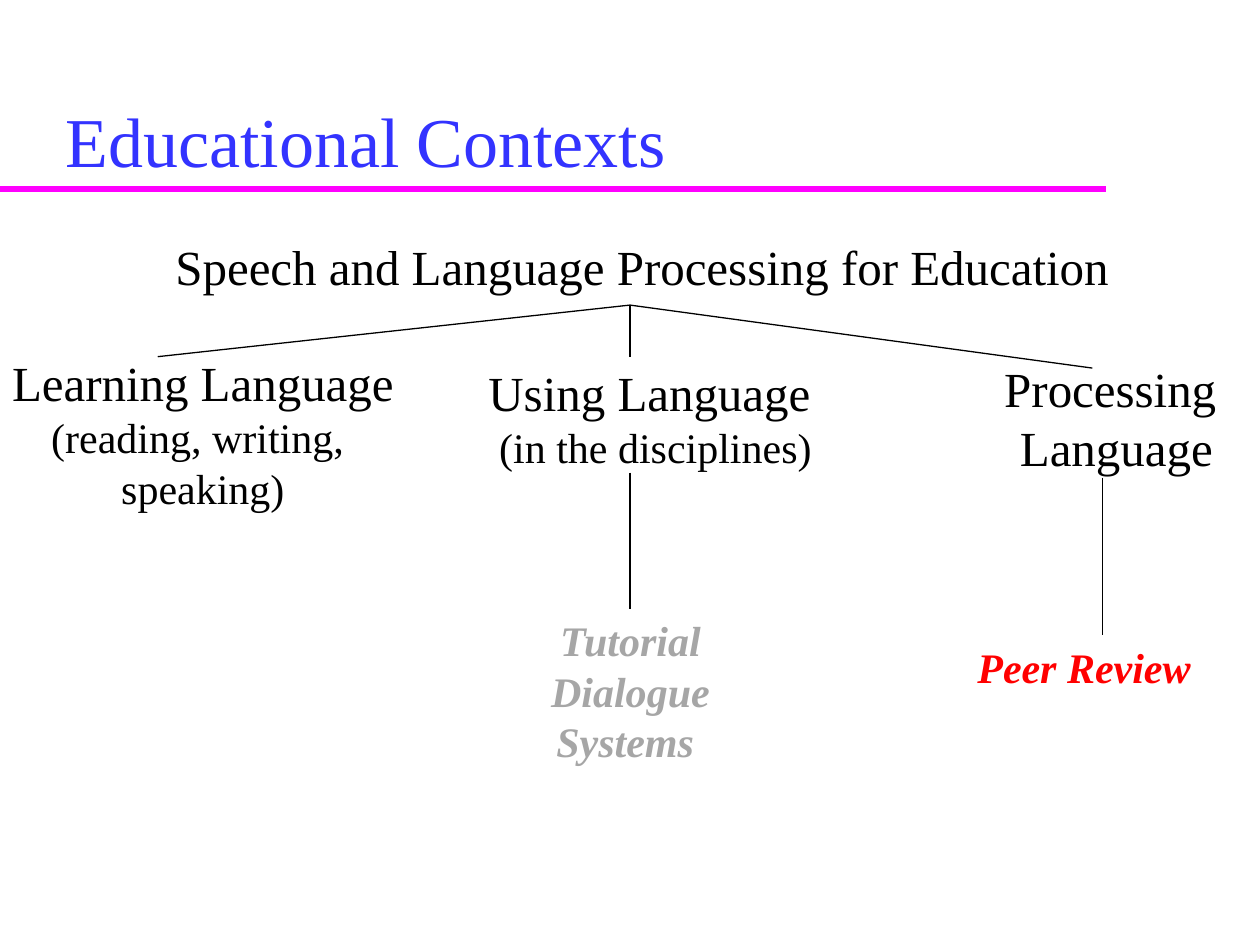
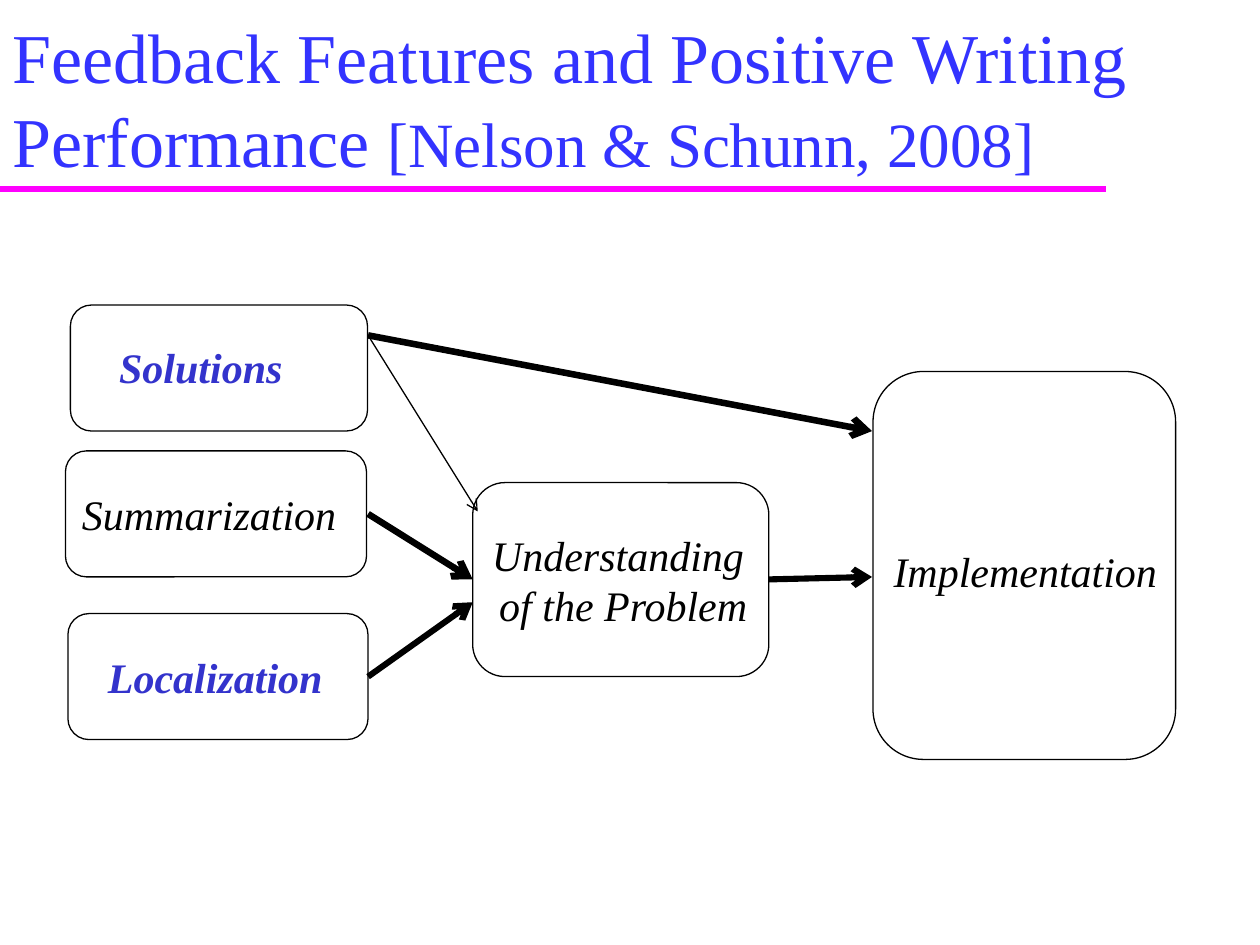
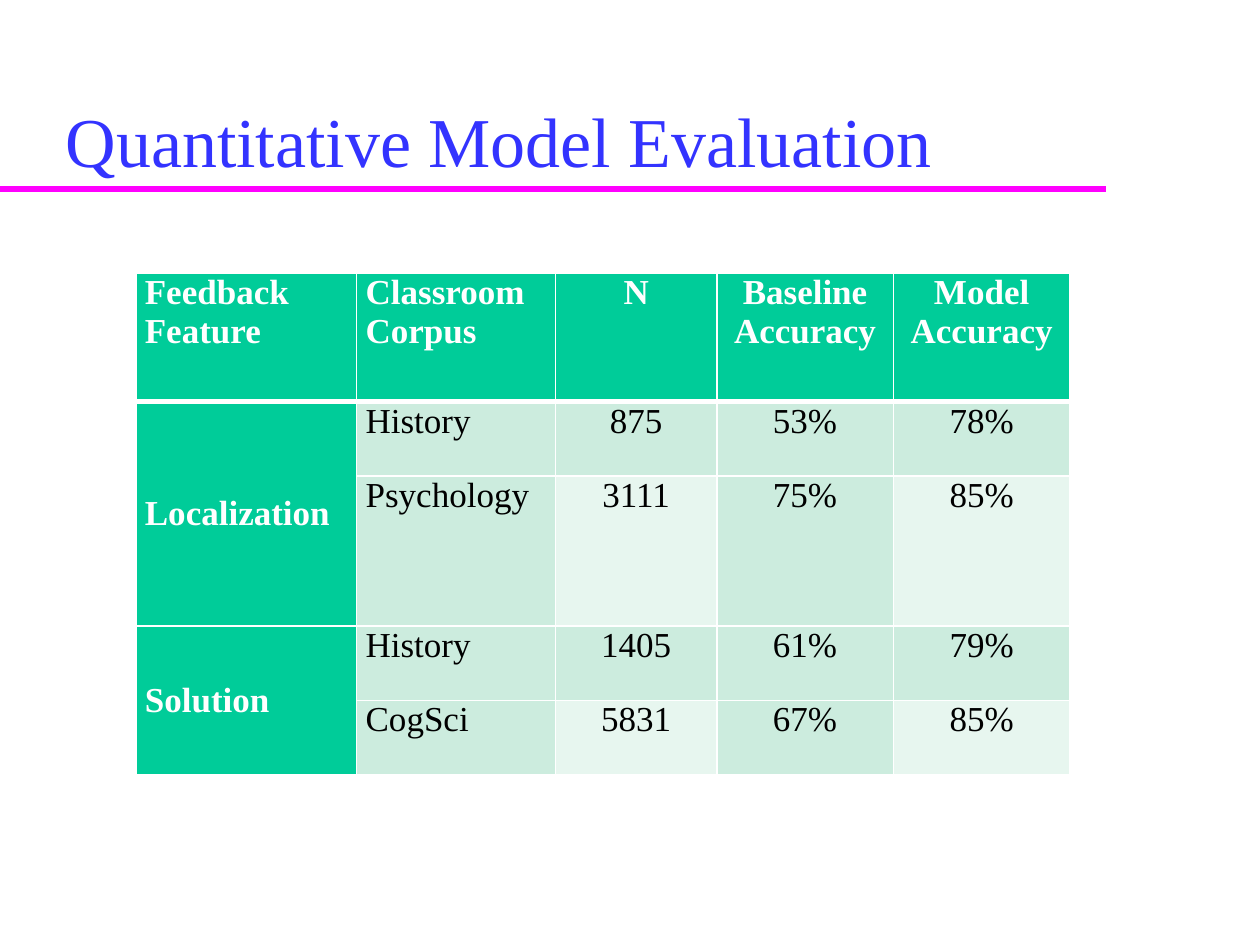
"""Build three slides on language processing in education and peer review."""
from dataclasses import dataclass

from lxml import etree
from pptx import Presentation
from pptx.dml.color import RGBColor
from pptx.enum.shapes import MSO_CONNECTOR, MSO_SHAPE
from pptx.enum.text import MSO_ANCHOR, MSO_AUTO_SIZE, PP_ALIGN
from pptx.oxml.ns import qn
from pptx.util import Cm, Pt

STRAIGHT = MSO_CONNECTOR.STRAIGHT
ROUNDED = MSO_SHAPE.ROUNDED_RECTANGLE
LEFT, CENTER = PP_ALIGN.LEFT, PP_ALIGN.CENTER
TOP, MIDDLE, BOTTOM = MSO_ANCHOR.TOP, MSO_ANCHOR.MIDDLE, MSO_ANCHOR.BOTTOM
NO_FIT = MSO_AUTO_SIZE.NONE


@dataclass(frozen=True)
class Theme:
    font: str = "Times New Roman"
    title: str = "3333FF"
    rule: str = "FF00FF"
    ink: str = "000000"
    muted: str = "A6A6A6"
    focus: str = "FF0000"
    key: str = "3333CC"
    white: str = "FFFFFF"
    header: str = "00CC99"
    band: str = "CCECDE"
    pale: str = "E7F6EF"
    title_size: int = 40
    citation_size: int = 36
    topic_size: int = 28
    label_size: int = 24
    table_size: int = 20
    hairline: float = 0.75


theme = Theme()


def write(frame, text, size=theme.label_size, color=theme.ink, bold=False,
          italic=False, align=CENTER, join=False):
    """Add each line of text as a paragraph, or join it to the last one."""
    for line in text.split("\n"):
        para = frame.paragraphs[-1]
        if para.runs and not join:
            para = frame.add_paragraph()
        para.alignment = align
        span = para.add_run()
        span.text = line
        span.font.name = theme.font
        span.font.size = Pt(size)
        span.font.bold = bold
        span.font.italic = italic
        span.font.color.rgb = RGBColor.from_string(color)


def draw_line(page, start, end, color=theme.ink, width=theme.hairline, arrow=False):
    """Draw a straight line between two points given in centimetres."""
    line = page.shapes.add_connector(STRAIGHT, *[Cm(value) for value in start + end])
    line.line.color.rgb = RGBColor.from_string(color)
    line.line.width = Pt(width)
    properties = line.element.spPr
    if arrow:
        etree.SubElement(properties.find(qn("a:ln")), qn("a:tailEnd"), type="arrow")
    etree.SubElement(properties, qn("a:effectLst"))
    return line


deck = Presentation()
deck.slide_width, deck.slide_height = Cm(25.4), Cm(19.05)
layout = deck.slide_layouts.get_by_name("Title Only")

titles = [
    ("Educational Contexts", 1.07, 21.56),
    ("Feedback Features and Positive Writing Performance ", 0, 25.4),
    ("Quantitative Model Evaluation", 1.07, 21.56),
]
pages = []
for text, left, width in titles:
    page = deck.slides.add_slide(layout)
    title = page.shapes.title
    title.left, title.top, title.width, title.height = Cm(left), Cm(0.74), Cm(width), Cm(3.05)
    title.text_frame.vertical_anchor = BOTTOM
    title.text_frame.auto_size = NO_FIT
    write(title.text_frame, text, size=theme.title_size, color=theme.title, align=LEFT)
    pages.append(page)
contexts, feedback, evaluation = pages

rule = draw_line(contexts, (0, 3.81), (22.3, 3.81), color=theme.rule, width=4)
layout.shapes.element.append(rule.element)

topic = {"size": theme.topic_size}
detail = {"size": theme.label_size}
strong = {"bold": True, "italic": True}
tree = [
    ((3.18, 4.65, 19.53, 1.45), False,
     [("Speech and Language Processing for Education", topic)]),
    ((-0.05, 6.99, 8.28, 4.52), False,
     [("Learning Language", topic), ("(reading, writing, \nspeaking)", detail)]),
    ((9.47, 7.19, 7.49, 2.49), False,
     [("Using Language ", topic), ("(in the disciplines)", detail)]),
    ((19.99, 7.11, 5.03, 2.62), False, [("Processing \nLanguage", topic)]),
    ((9.41, 12.27, 6.6, 3.33), True,
     [("Tutorial Dialogue\nSystems ", {"color": theme.muted, **strong})]),
    ((19.43, 12.8, 4.85, 1.27), False,
     [("Peer Review", {"color": theme.focus, **strong})]),
]
for place, wrap, parts in tree:
    box = contexts.shapes.add_textbox(*[Cm(value) for value in place])
    box.text_frame.word_wrap = wrap
    for text, style in parts:
        write(box.text_frame, text, **style)

hub = (12.7, 6.15)
branches = [
    (hub, (3.18, 7.19)),
    (hub, (12.7, 7.19)),
    (hub, (22.02, 7.42)),
    ((12.7, 9.53), (12.7, 12.27)),
    ((22.23, 9.63), (22.23, 12.8)),
]
for start, end in branches:
    draw_line(contexts, start, end)

write(feedback.shapes.title.text_frame, "[Nelson & Schunn, 2008]",
      size=theme.citation_size, color=theme.title, align=LEFT, join=True)

plain = {"italic": True}
key = {"color": theme.key, **strong}
factors = [
    ("Solutions", key, (1.42, 6.15, 5.99, 2.54), (2.13, 6.76, 3.84, 1.27)),
    ("Implementation", plain, (17.6, 7.49, 6.1, 7.82), (17.62, 10.87, 6.1, 1.3)),
    ("Summarization", plain, (1.32, 9.09, 6.07, 2.54), (1.37, 9.73, 5.69, 1.27)),
    ("Localization", key, (1.37, 12.37, 6.05, 2.54), (1.9, 13, 4.88, 1.3)),
    ("Understanding \nof the Problem", plain, (9.53, 9.73, 5.97, 3.91),
     (9.63, 10.54, 5.87, 2.31)),
]
for text, style, frame_place, label_place in factors:
    frame = feedback.shapes.add_shape(ROUNDED, *[Cm(value) for value in frame_place])
    frame.shadow.inherit = False
    frame.fill.background()
    frame.line.color.rgb = RGBColor.from_string(theme.ink)
    frame.line.width = Pt(theme.hairline)
    label = feedback.shapes.add_textbox(*[Cm(value) for value in label_place])
    label.text_frame.word_wrap = False
    write(label.text_frame, text, **style)

arrows = [
    ((7.42, 6.76), (17.58, 8.69), 3.75),
    ((7.42, 6.76), (9.63, 10.31), theme.hairline),
    ((7.42, 10.36), (9.53, 11.68), 3.75),
    ((7.42, 13.64), (9.53, 12.14), 3.5),
    ((15.49, 11.68), (17.58, 11.63), 3.5),
]
for start, end, width in arrows:
    draw_line(feedback, start, end, width=width, arrow=True)

results = [
    ["Feedback\nFeature", "Classroom\nCorpus", "N", "Baseline\nAccuracy", "Model\nAccuracy"],
    ["Localization", "History", "875", "53%", "78%"],
    ["", "Psychology", "3111", "75%", "85%"],
    ["Solution", "History", "1405", "61%", "79%"],
    ["", "CogSci", "5831", "67%", "85%"],
]
column_widths = [4.45, 4.01, 3.25, 3.56, 3.56]
row_heights = [2.59, 1.5, 3.02, 1.5, 1.5]
table = evaluation.shapes.add_table(
    len(row_heights), len(column_widths), Cm(2.74), Cm(5.51),
    Cm(sum(column_widths)), Cm(sum(row_heights))).table
table.first_row = table.horz_banding = False
for column, width in zip(table.columns, column_widths):
    column.width = Cm(width)
for row, height in zip(table.rows, row_heights):
    row.height = Cm(height)

for row_index, values in enumerate(results):
    for column_index, text in enumerate(values):
        cell = table.cell(row_index, column_index)
        heading = row_index == 0 or column_index == 0
        pale = row_index % 2 == 0 and column_index in (2, 4)
        fill = theme.header if heading else theme.pale if pale else theme.band
        edges = {"lnL": 1, "lnR": 1, "lnT": 3 if row_index == 1 else 1,
                 "lnB": 3 if row_index == 0 else 1}
        properties = cell._tc.get_or_add_tcPr()
        for edge, width in edges.items():
            border = etree.SubElement(properties, qn(f"a:{edge}"), w=str(Pt(width)))
            paint = etree.SubElement(border, qn("a:solidFill"))
            etree.SubElement(paint, qn("a:srgbClr"), val=theme.white)
        cell.fill.solid()
        cell.fill.fore_color.rgb = RGBColor.from_string(fill)
        cell.margin_left = cell.margin_right = Cm(0.18)
        cell.margin_top = cell.margin_bottom = 0
        cell.vertical_anchor = MIDDLE if row_index and column_index == 0 else TOP
        if text:
            write(cell.text_frame, text, size=theme.table_size, bold=heading,
                  color=theme.white if heading else theme.ink,
                  align=LEFT if column_index < 2 else CENTER)
for row_index in (1, 3):
    table.cell(row_index, 0).merge(table.cell(row_index + 1, 0))

deck.save("out.pptx")
